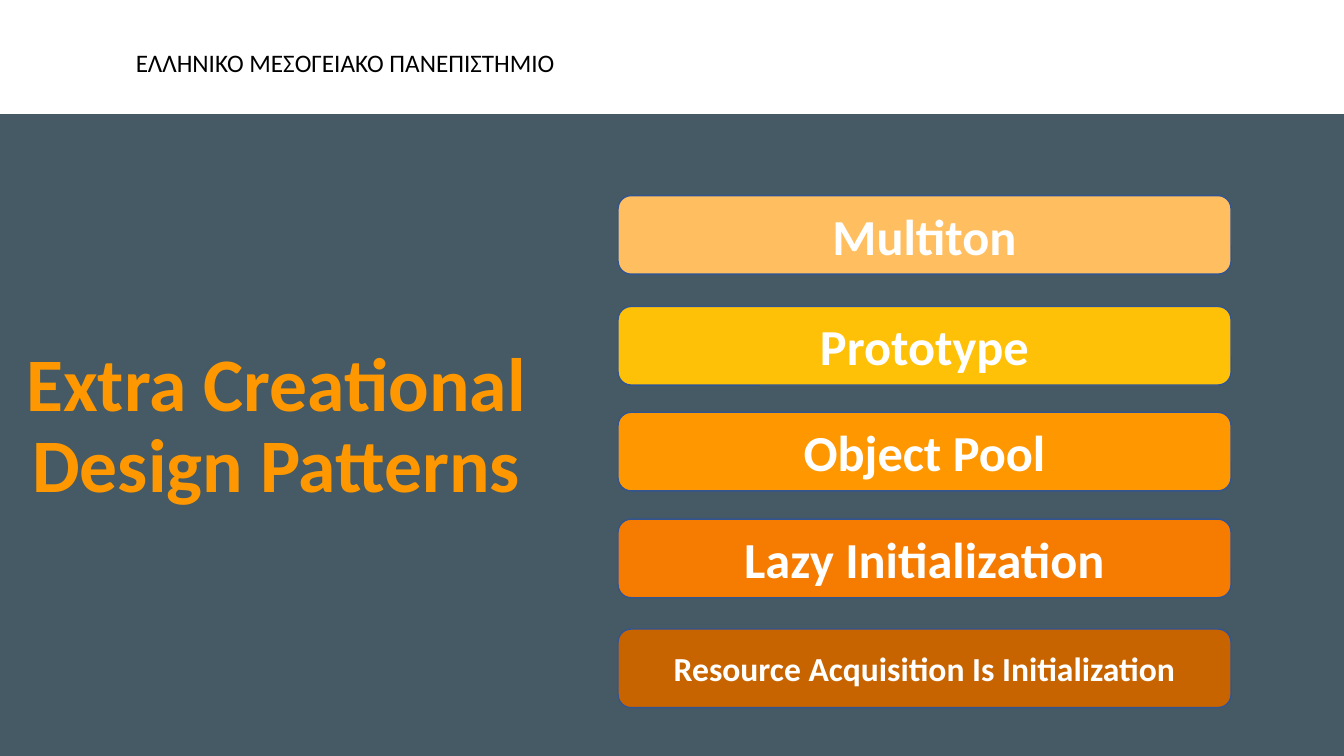
from pptx import Presentation
from pptx.dml.color import RGBColor
from pptx.enum.shapes import MSO_SHAPE as SHAPE
from pptx.enum.text import MSO_ANCHOR as ANCHOR, MSO_AUTO_SIZE as AUTO_SIZE, PP_ALIGN as ALIGN
from pptx.util import Inches, Pt

COLORS = {
    "background": "455A64",
    "white": "FFFFFF",
    "black": "000000",
    "title": "FF9800",
    "outline": "325491",
}
FONT = "Calibri"

# Name, top offset within the list, fill, text size
PATTERNS = [
    ("Multiton", 0, "FFBF61", 36),
    ("Prototype", 1.1, "FFC107", 36),
    ("Object Pool", 2.15, "FF9800", 36),
    ("Lazy Initialization", 3.21, "F57C00", 36),
    ("Resource Acquisition Is Initialization", 4.3, "C86400", 24),
]
PATTERN_HEIGHT = 0.78


def rgb(name):
    return RGBColor.from_string(COLORS.get(name, name))


def write(frame, text, size, color, bold=False, align=ALIGN.LEFT):
    frame.text = text
    paragraph = frame.paragraphs[0]
    paragraph.alignment = align
    font = paragraph.font
    font.name, font.size, font.bold = FONT, Pt(size), bold
    font.color.rgb = rgb(color)
    return paragraph


def add_panel(slide, kind, box, fill):
    panel = slide.shapes.add_shape(kind, *map(Inches, box))
    panel.shadow.inherit = False
    panel.fill.solid()
    panel.fill.fore_color.rgb = rgb(fill)
    return panel


def add_header(slide, left, top, width, height):
    band = add_panel(slide, SHAPE.RECTANGLE, (left, top, width, height), "white")
    band.line.fill.background()
    university = slide.shapes.add_textbox(
        Inches(left + 1.25), Inches(top + 0.42), Inches(4.47), Inches(0.4))
    frame = university.text_frame
    frame.word_wrap = True
    write(frame, "ΕΛΛΗΝΙΚΟ ΜΕΣΟΓΕΙΑΚΟ ΠΑΝΕΠΙΣΤΗΜΙΟ", 18, "black")


def set_title(slide, left, top, width, height):
    title = slide.shapes.title
    title.left, title.top = Inches(left), Inches(top)
    title.width, title.height = Inches(width), Inches(height)
    frame = title.text_frame
    frame.word_wrap = True
    frame.auto_size = AUTO_SIZE.NONE
    frame.vertical_anchor = ANCHOR.BOTTOM
    heading = write(frame, "Extra Creational Design Patterns", 54, "title", True, ALIGN.CENTER)
    heading.line_spacing = 0.9


def add_patterns(slide, left, top, width):
    for name, offset, fill, size in PATTERNS:
        box = (left, top + offset, width, PATTERN_HEIGHT)
        pattern = add_panel(slide, SHAPE.ROUNDED_RECTANGLE, box, fill)
        pattern.line.color.rgb = rgb("outline")
        pattern.line.width = Pt(1)
        pattern.text_frame.vertical_anchor = ANCHOR.MIDDLE
        write(pattern.text_frame, name, size, "white", True, ALIGN.CENTER)


def main():
    presentation = Presentation()
    presentation.slide_width, presentation.slide_height = Inches(13.33), Inches(7.5)
    slide = presentation.slides.add_slide(presentation.slide_layouts[0])
    subtitle = slide.placeholders[1].element
    subtitle.getparent().remove(subtitle)
    slide.background.fill.solid()
    slide.background.fill.fore_color.rgb = rgb("background")

    add_header(slide, 0, 0, 13.33, 1.13)
    set_title(slide, 0.16, 3.02, 5.16, 2.08)
    add_patterns(slide, 6.13, 1.94, 6.08)
    presentation.save("out.pptx")


if __name__ == "__main__":
    main()
